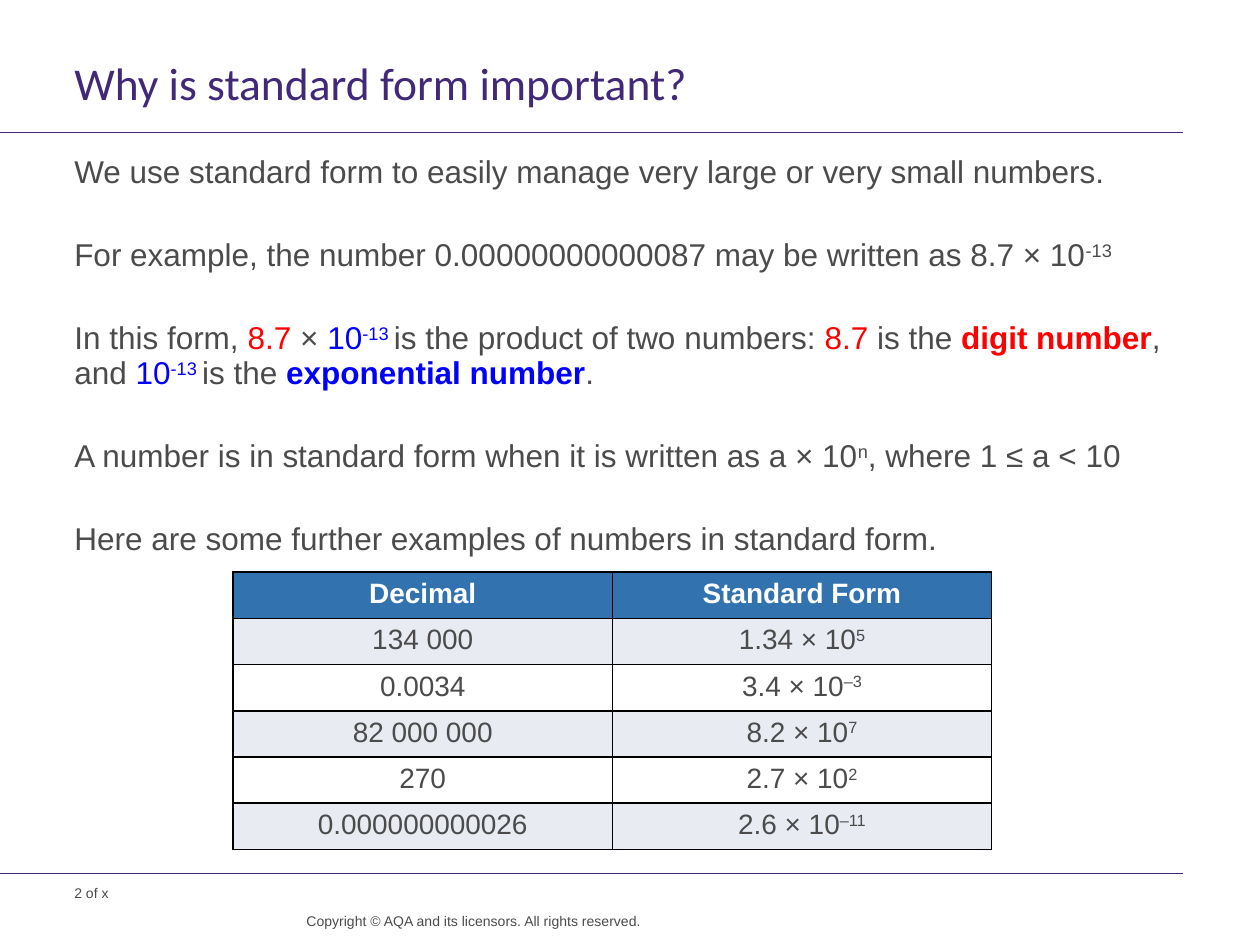
from dataclasses import dataclass

from lxml.etree import SubElement
from pptx import Presentation
from pptx.dml.color import RGBColor
from pptx.enum.shapes import MSO_CONNECTOR
from pptx.enum.text import MSO_ANCHOR, PP_ALIGN
from pptx.oxml.ns import qn
from pptx.util import Inches, Pt


@dataclass(frozen=True)
class Theme:
    purple: str = "412878"
    ink: str = "4B4B4B"
    red: str = "FF0000"
    blue: str = "0000FF"
    white: str = "FFFFFF"
    header: str = "3273AF"
    band: str = "E8EBF2"
    border: str = "000000"
    heading_font: str = "Calibri"
    body_font: str = "Arial"
    title_size: float = 26
    body_size: float = 18
    table_size: float = 16
    small_size: float = 8


THEME = Theme()
DIGIT = {"color": THEME.red}
EXPONENT = {"color": THEME.blue}
RAISED = {"raised": True}


def write(paragraph, pieces, size, color=THEME.ink, font=THEME.body_font,
          bold=False, align=PP_ALIGN.LEFT, leading=None, before=None):
    """Fill a paragraph from a string or a list of strings and (text, format) pairs."""
    paragraph.alignment = align
    if leading:
        paragraph.line_spacing = Pt(leading)
    if before:
        paragraph.space_before = Pt(before)
    for piece in [pieces] if isinstance(pieces, str) else pieces:
        text, style = (piece, {}) if isinstance(piece, str) else piece
        run = paragraph.add_run()
        run.text = text
        run.font.name = font
        run.font.size = Pt(size)
        run.font.bold = style.get("bold", bold)
        run.font.color.rgb = RGBColor.from_string(style.get("color", color))
        if style.get("raised"):
            run._r.get_or_add_rPr().set("baseline", "30000")


class SlideBuilder:
    def __init__(self, slide, theme):
        self.slide = slide
        self.theme = theme

    def rule(self, y):
        line = self.slide.shapes.add_connector(
            MSO_CONNECTOR.STRAIGHT, Inches(0), Inches(y), Inches(9.39), Inches(y))
        line.line.color.rgb = RGBColor.from_string(self.theme.purple)
        line.line.width = Pt(0.6)
        SubElement(line._element.spPr, qn("a:effectLst"))

    def text(self, box, paragraphs, right_inset=0, gap=None, **style):
        frame = self.slide.shapes.add_textbox(*map(Inches, box)).text_frame
        frame.word_wrap = True
        frame.vertical_anchor = MSO_ANCHOR.TOP
        frame.margin_left = frame.margin_top = frame.margin_bottom = 0
        frame.margin_right = Inches(right_inset)
        for i, pieces in enumerate(paragraphs):
            paragraph = frame.add_paragraph() if i else frame.paragraphs[0]
            write(paragraph, pieces, before=gap if i else None, **style)

    def table(self, box, rows):
        grid = self.slide.shapes.add_table(
            len(rows), len(rows[0]), *map(Inches, box)).table
        for r, row in enumerate(rows):
            grid.rows[r].height = Inches(box[3] / len(rows))
            for c, pieces in enumerate(row):
                self.cell(grid.cell(r, c), pieces, r)

    def cell(self, cell, pieces, row):
        theme = self.theme
        header = row == 0
        cell.margin_left = cell.margin_right = Inches(0.09)
        cell.margin_top = cell.margin_bottom = Inches(0.05)
        write(cell.text_frame.paragraphs[0], pieces, theme.table_size,
              color=theme.white if header else theme.ink, bold=header,
              align=PP_ALIGN.CENTER)
        # Borders come before the fill in the cell properties
        properties = cell._tc.get_or_add_tcPr()
        for side in ("a:lnL", "a:lnR", "a:lnT", "a:lnB"):
            edge = SubElement(properties, qn(side), w=str(Pt(1)))
            fill = SubElement(edge, qn("a:solidFill"))
            SubElement(fill, qn("a:srgbClr"), val=theme.border)
        cell.fill.solid()
        color = theme.header if header else theme.band if row % 2 else theme.white
        cell.fill.fore_color.rgb = RGBColor.from_string(color)


def main():
    deck = Presentation()
    deck.slide_width, deck.slide_height = Inches(10), Inches(7.5)
    page = SlideBuilder(deck.slides.add_slide(deck.slide_layouts[6]), THEME)

    # Rules and footer
    for y in (1.05, 6.93):
        page.rule(y)
    page.text((0.59, 7.02, 1.57, 0.13), ["2 of x"], size=THEME.small_size)
    page.text((2.16, 7.24, 2.93, 0.26),
              ["Copyright © AQA and its licensors. All rights reserved."],
              size=THEME.small_size, align=PP_ALIGN.RIGHT, leading=10)

    # Title
    page.text((0.59, 0.48, 8.8, 0.47), ["Why is standard form important?"],
              right_inset=0.1, size=THEME.title_size, color=THEME.purple,
              font=THEME.heading_font, leading=28)

    # Explanation
    explanation = [
        "We use standard form to easily manage very large or very small numbers.",
        ["For example, the number 0.00000000000087 may be written as 8.7 × 10",
         ("-13", RAISED)],
        ["In this form, ", ("8.7", DIGIT), " × ", ("10", EXPONENT),
         ("-13 ", EXPONENT | RAISED), "is the product of two numbers: ",
         ("8.7 ", DIGIT), "is the ", ("digit number", DIGIT | {"bold": True}),
         ", and ", ("10", EXPONENT), ("-13 ", EXPONENT | RAISED), "is the ",
         ("exponential number", EXPONENT | {"bold": True}), "."],
        ["A number is in standard form when it is written as a × 10",
         ("n", RAISED), ", where 1 ≤ a < 10"],
        "Here are some further examples of numbers in standard form.",
    ]
    page.text((0.59, 1.23, 9.03, 5.48), explanation, right_inset=0.1,
              size=THEME.body_size, leading=20, gap=27.4)

    # Examples: decimal, digit number, exponent
    examples = [
        ("134 000", "1.34", "5"),
        ("0.0034", "3.4", "–3"),
        ("82 000 000", "8.2", "7"),
        ("270", "2.7", "2"),
        ("0.000000000026", "2.6", "–11"),
    ]
    rows = [("Decimal", "Standard Form")]
    rows += [(decimal, [f"{digit} × 10", (power, RAISED)])
             for decimal, digit, power in examples]
    page.table((1.85, 4.54, 6.02, 2.17), rows)

    deck.save("out.pptx")


if __name__ == "__main__":
    main()
